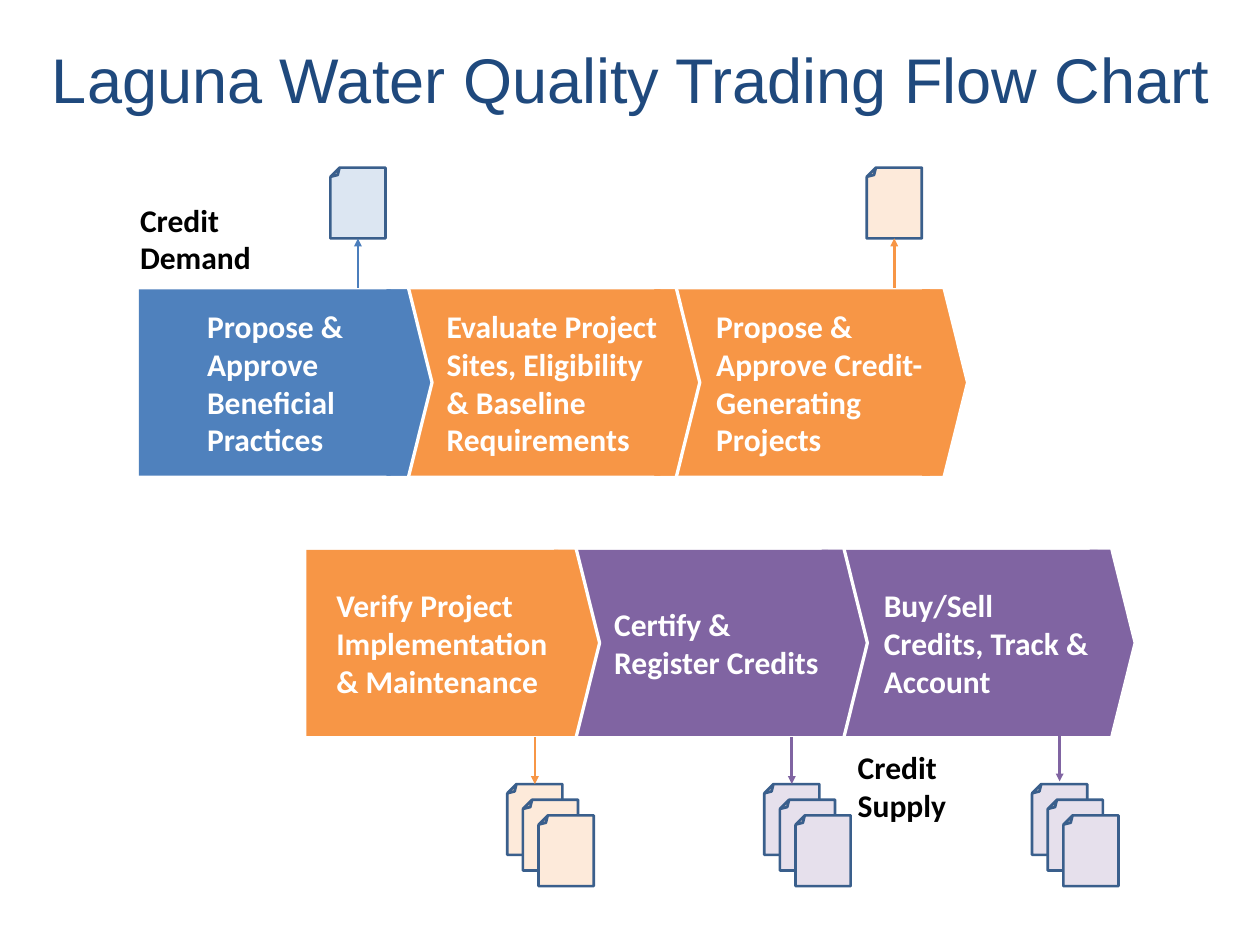
from lxml import etree
from pptx import Presentation
from pptx import util as u
from pptx.dml.color import RGBColor
from pptx.enum import shapes, text
from pptx.oxml.ns import qn

WHITE = RGBColor(0xFF, 0xFF, 0xFF)
BLACK = RGBColor(0x00, 0x00, 0x00)
NAVY = RGBColor(0x1F, 0x49, 0x7D)
BLUE = RGBColor(0x4F, 0x81, 0xBD)
ARROW_BLUE = RGBColor(0x4B, 0x7E, 0xBC)
ORANGE = RGBColor(0xF7, 0x96, 0x46)
PURPLE = RGBColor(0x80, 0x64, 0xA2)
PALE_BLUE = RGBColor(0xDC, 0xE6, 0xF2)
PALE_ORANGE = RGBColor(0xFD, 0xEA, 0xDA)
PALE_PURPLE = RGBColor(0xE6, 0xE0, 0xEC)
OUTLINE = RGBColor(0x3A, 0x5F, 0x8C)

# Lengths in centimetres
STEP_WIDTH, STEP_HEIGHT, STEP_PITCH = 6.76, 5, 7.24
POINT_OFFSET, POINT_PITCH, POINT_OVERHANG = 6.6, 7.19, 0.05
PAGE_WIDTH, PAGE_HEIGHT, PAGE_SHIFT = 1.48, 1.9, 0.42


class FlowChart:
    """Holds the slide and the style of its elements."""

    title_font = {"name": "Arial", "size": u.Pt(48), "bold": False}
    body_font = {"name": "Calibri", "size": u.Pt(24), "bold": True}

    def __init__(self, slide):
        self.slide = slide

    def set_text(self, shape, words, font, color, align=text.PP_ALIGN.LEFT, **frame):
        values = {"word_wrap": True, "auto_size": text.MSO_AUTO_SIZE.NONE, **frame}
        for name, value in values.items():
            setattr(shape.text_frame, name, value)
        paragraph = shape.text_frame.paragraphs[0]
        paragraph.alignment = align
        run = paragraph.add_run()
        run.text = words
        for name, value in font.items():
            setattr(run.font, name, value)
        run.font.color.rgb = color

    def title(self, words, *box):
        shape = self.slide.shapes.title
        for name, value in zip(("left", "top", "width", "height"), box):
            setattr(shape, name, u.Cm(value))
        self.set_text(shape, words, self.title_font, NAVY, text.PP_ALIGN.CENTER,
                      vertical_anchor=text.MSO_ANCHOR.MIDDLE)

    def label(self, words, *box):
        shape = self.slide.shapes.add_textbox(*map(u.Cm, box))
        self.set_text(shape, words, self.body_font, BLACK)

    def shape(self, kind, box, fill, line=None, width=0):
        shape = self.slide.shapes.add_shape(kind, *map(u.Cm, box))
        shape.shadow.inherit = False
        shape.fill.solid()
        shape.fill.fore_color.rgb = fill
        if line is None:
            shape.line.fill.background()
        else:
            shape.line.color.rgb = line
            shape.line.width = u.Pt(width)
        return shape

    def step_row(self, left, top, steps):
        """Draw from right to left, so each point overlaps the next step."""
        for index, (words, fill, inset) in reversed(list(enumerate(steps))):
            point_left = left + POINT_OFFSET + index * POINT_PITCH
            self.shape(shapes.MSO_SHAPE.PENTAGON,
                       (point_left, top - POINT_OVERHANG, 1.27,
                        STEP_HEIGHT + 2 * POINT_OVERHANG), fill, WHITE, 2.5)
            step = self.shape(shapes.MSO_SHAPE.RECTANGLE,
                              (left + index * STEP_PITCH, top, STEP_WIDTH, STEP_HEIGHT), fill)
            self.set_text(step, words, self.body_font, WHITE,
                          vertical_anchor=text.MSO_ANCHOR.MIDDLE,
                          margin_left=u.Cm(inset), margin_right=0)

    def pages(self, left, top, fill, count=1):
        for index in range(count):
            shift = index * PAGE_SHIFT
            page = self.shape(shapes.MSO_SHAPE.FOLDED_CORNER,
                              (left + shift, top + shift, PAGE_WIDTH, PAGE_HEIGHT),
                              fill, OUTLINE, 2)
            page.rotation = 180

    def arrow(self, page_left, start, end, color):
        x = u.Cm(page_left + PAGE_WIDTH / 2)
        connector = self.slide.shapes.add_connector(
            shapes.MSO_CONNECTOR.STRAIGHT, x, u.Cm(start), x, u.Cm(end))
        connector.line.color.rgb = color
        connector.line.width = u.Pt(2)
        properties = connector._element.spPr
        etree.SubElement(properties.find(qn("a:ln")), qn("a:tailEnd"), type="triangle")
        etree.SubElement(properties, qn("a:effectLst"))


def main():
    presentation = Presentation()
    presentation.slide_width, presentation.slide_height = u.Cm(33.83), u.Cm(25.37)
    chart = FlowChart(presentation.slides.add_slide(presentation.slide_layouts[5]))
    chart.title("Laguna Water Quality Trading Flow Chart", 0.94, 0, 32, 4.22)

    # Process steps: words, fill, left inset
    chart.step_row(3.73, 7.77, [
        ("Propose & Approve Beneficial Practices", BLUE, 1.83),
        ("Evaluate Project Sites, Eligibility & Baseline Requirements", ORANGE, 1.02),
        ("Propose & Approve Credit-Generating Projects", ORANGE, 1.02),
    ])
    chart.step_row(8.23, 14.76, [
        ("Verify Project Implementation & Maintenance", ORANGE, 0.8),
        ("Certify & Register Credits", PURPLE, 1.02),
        ("Buy/Sell Credits, Track & Account", PURPLE, 1.02),
    ])

    # Single documents above the first row
    for left, fill, color in [(8.87, PALE_BLUE, ARROW_BLUE), (23.27, PALE_ORANGE, ORANGE)]:
        chart.pages(left, 4.5, fill)
        chart.arrow(left, 7.72, 6.4, color)

    # Document stacks below the second row
    for left, start, fill, color in [(13.62, 19.78, PALE_ORANGE, ORANGE),
                                     (20.52, 19.78, PALE_PURPLE, PURPLE),
                                     (27.71, 19.71, PALE_PURPLE, PURPLE)]:
        chart.pages(left, 21.05, fill, count=3)
        chart.arrow(left, start, start + 1.27, color)

    # Market sides
    chart.label("Credit Demand", 3.51, 5.26, 3.6, 2.3)
    chart.label("Credit Supply", 22.78, 19.96, 3.6, 2.3)

    presentation.save("out.pptx")


if __name__ == "__main__":
    main()
